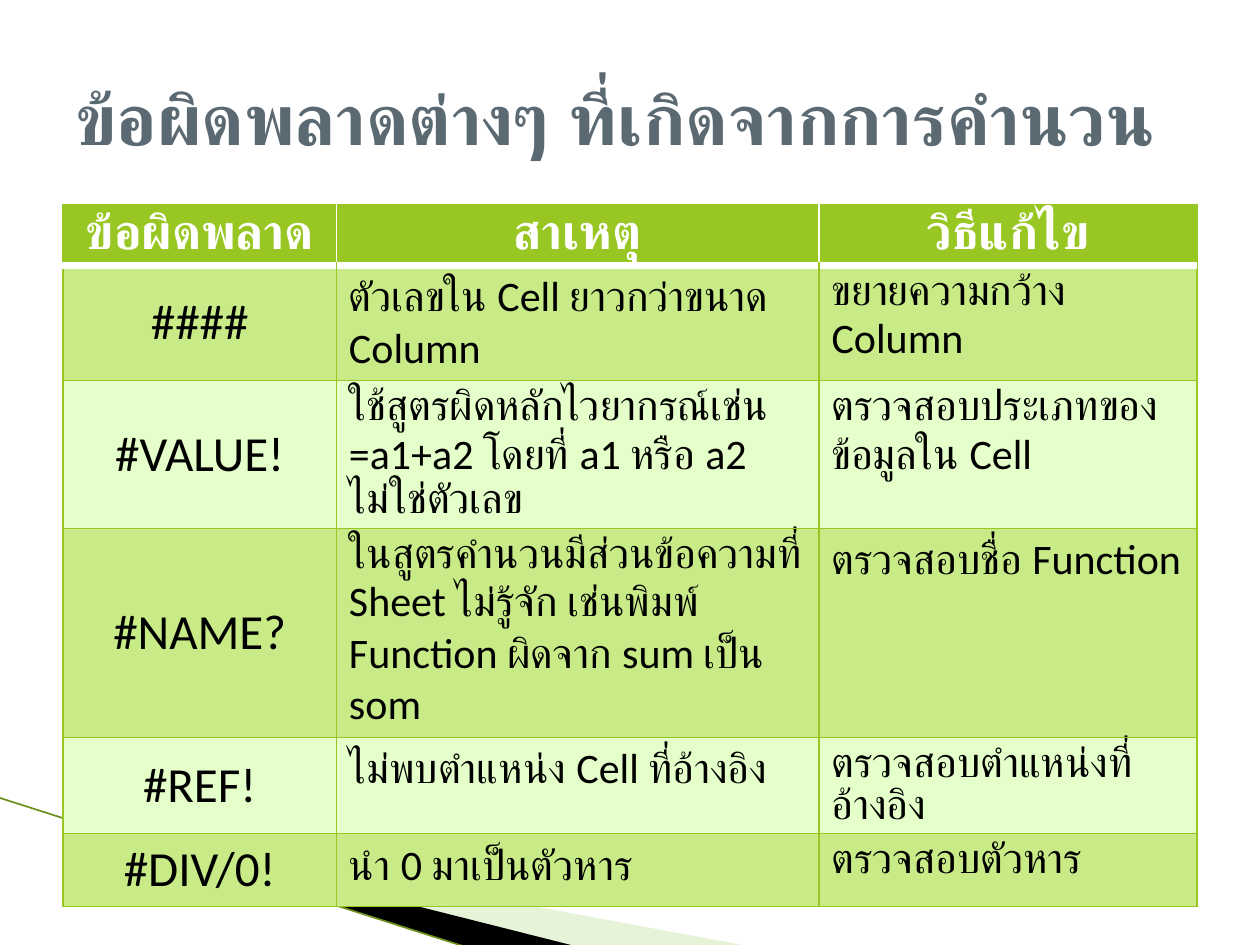
from lxml import etree
from pptx import Presentation
from pptx.dml.color import RGBColor
from pptx.enum.shapes import MSO_CONNECTOR
from pptx.enum.text import MSO_ANCHOR, PP_ALIGN
from pptx.oxml.ns import qn
from pptx.util import Inches, Pt

LINE = MSO_CONNECTOR.STRAIGHT
MIDDLE, TOP = MSO_ANCHOR.MIDDLE, MSO_ANCHOR.TOP
CENTER, LEFT = PP_ALIGN.CENTER, PP_ALIGN.LEFT
FONT = "Calibri"
GREEN, WHITE, BLACK, SLATE = "98C723", "FFFFFF", "000000", "5B6973"
BANDS = ("C8EB87", "E5FFCA")

WIDTHS = (2.17, 3.83, 3)
ROW = 0.41
HEAD = ("ข้อผิดพลาด", "สาเหตุ", "วิธีแก้ไข")
ERRORS = (
    ("####", "ตัวเลขใน Cell ยาวกว่าขนาด Column", "ขยายความกว้าง Column"),
    ("#VALUE!", "ใช้สูตรผิดหลักไวยากรณ์เช่น =a1+a2 โดยที่ a1 หรือ a2 ไม่ใช่ตัวเลข",
     "ตรวจสอบประเภทของข้อมูลใน Cell"),
    ("#NAME?", "ในสูตรคำนวนมีส่วนข้อความที่ Sheet ไม่รู้จัก เช่นพิมพ์ Function ผิดจาก sum เป็น som",
     "ตรวจสอบชื่อ Function"),
    ("#REF!", "ไม่พบตำแหน่ง Cell ที่อ้างอิง", "ตรวจสอบตำแหน่งที่อ้างอิง"),
    ("#DIV/0!", "นำ 0 มาเป็นตัวหาร", "ตรวจสอบตัวหาร"),
)


def rgb(code):
    return RGBColor.from_string(code)


def write(frame, text, size, color, bold=False, align=LEFT):
    para = frame.paragraphs[0]
    para.alignment = align
    run = para.add_run()
    run.text = text
    font = run.font
    font.name, font.size, font.bold = FONT, Pt(size), bold
    font.color.rgb = rgb(color)


def wedge(slide, left, top, points, color, alpha=None):
    """Draw a filled outline from points relative to its corner."""
    spots = [(Inches(left + x), Inches(top + y)) for x, y in points]
    build = slide.shapes.build_freeform(*spots[0])
    build.add_line_segments(spots[1:], close=True)
    shape = build.convert_to_shape()
    shape.shadow.inherit = False
    shape.fill.solid()
    shape.fill.fore_color.rgb = rgb(color)
    shape.line.fill.background()
    if alpha:
        tint = shape.fill._xPr.find(qn("a:solidFill"))[0]
        etree.SubElement(tint, qn("a:alpha")).set("val", str(alpha * 1000))


def add_swoosh(slide, left, top):
    # Pale and black wedges, with a thin line along their upper edge
    wedge(slide, left + 0.02, top + 0.01,
          [(0, 0.01), (5.4, 1.01), (4.01, 1.01), (0, 0)], "C5E19F", 40)
    wedge(slide, left, top, [(0, 0), (4.04, 1.02), (3.19, 1.03), (0.01, 0.01)], BLACK)
    edge = slide.shapes.add_connector(
        LINE, Inches(left - 0.54), Inches(top - 0.16),
        Inches(left + 3.18), Inches(top + 1.03))
    edge.line.color.rgb = rgb("6E8F1A")
    edge.line.width = Pt(0.95)
    etree.SubElement(edge._element.spPr, qn("a:effectLst"))


def border(cell, side, color, width):
    props = cell._tc.get_or_add_tcPr()
    line = etree.SubElement(props, qn("a:ln" + side), w=str(Pt(width)))
    fill = etree.SubElement(line, qn("a:solidFill"))
    etree.SubElement(fill, qn("a:srgbClr"), val=color)


def style(cell, fill, sides):
    # Borders come before the fill in the cell properties
    for side, (color, width) in sides.items():
        border(cell, side, color, width)
    cell.fill.solid()
    cell.fill.fore_color.rgb = rgb(fill)


def add_grid(slide, left, top, width, height):
    frame = slide.shapes.add_table(
        len(ERRORS) + 1, len(HEAD),
        Inches(left), Inches(top), Inches(width), Inches(height))
    table = frame.table
    for col, size in zip(table.columns, WIDTHS):
        col.width = Inches(size)
    for row in table.rows:
        row.height = Inches(ROW)
    frame.height = Inches(height)

    thin, thick = (GREEN, 0.75), (WHITE, 4.33)
    # Header row
    for c, text in enumerate(HEAD):
        cell = table.cell(0, c)
        sides = {"T": thin, "B": thick}
        if c == 0:
            sides = {"L": thin, **sides}
        elif c == len(HEAD) - 1:
            sides = {"R": thin, **sides}
        style(cell, GREEN, sides)
        write(cell.text_frame, text, 28, WHITE, True, CENTER)

    # Error rows in alternating bands
    for r, texts in enumerate(ERRORS, 1):
        for c, text in enumerate(texts):
            cell = table.cell(r, c)
            upper = thick if r == 1 else thin
            style(cell, BANDS[(r - 1) % 2],
                  {"L": thin, "R": thin, "T": upper, "B": thin})
            name = c == 0
            cell.vertical_anchor = MIDDLE if name else TOP
            write(cell.text_frame, text, 28 if name else 24, BLACK,
                  align=CENTER if name else LEFT)


def add_title(slide, left, top, width, height):
    box = slide.shapes.add_textbox(
        Inches(left), Inches(top), Inches(width), Inches(height))
    frame = box.text_frame
    frame.word_wrap = True
    frame.vertical_anchor = MIDDLE
    write(frame, "ข้อผิดพลาดต่างๆ ที่เกิดจากการคำนวน", 41, SLATE, True)


def main():
    deck = Presentation()
    deck.slide_width, deck.slide_height = Inches(10), Inches(7.5)
    slide = deck.slides.add_slide(deck.slide_layouts[6])
    add_swoosh(slide, 0.53, 6.49)
    add_grid(slide, 0.5, 1.62, 9, 4.47)
    add_title(slide, 0.5, 0.3, 9, 1.25)
    deck.save("out.pptx")


if __name__ == "__main__":
    main()
